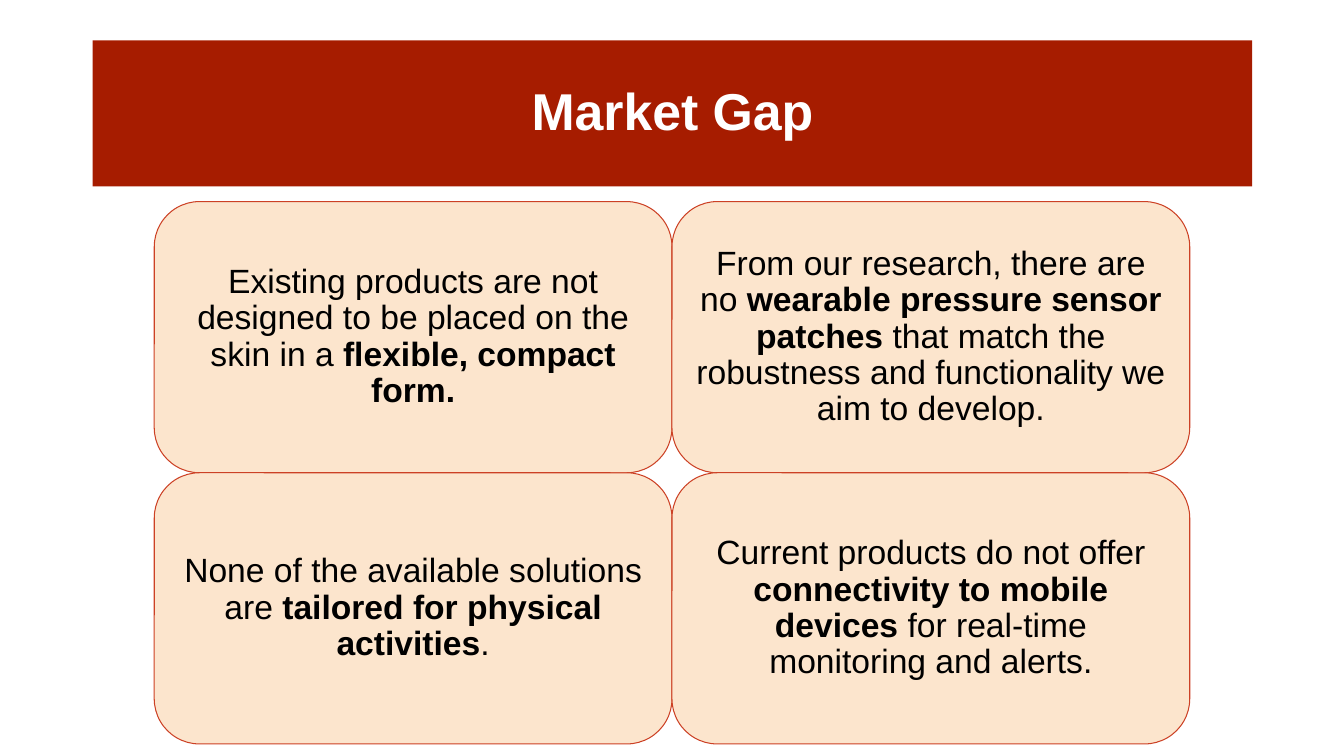
import pptx
import pptx.dml.color
import pptx.enum.shapes
import pptx.enum.text
import pptx.util

RGBColor = pptx.dml.color.RGBColor
Inches = pptx.util.Inches
Shapes = pptx.enum.shapes.MSO_SHAPE

BRICK = RGBColor(0xA6, 0x1C, 0x00)
RUST = RGBColor(0xCC, 0x41, 0x25)
CREAM = RGBColor(0xFC, 0xE5, 0xCD)
BLACK = RGBColor(0, 0, 0)
WHITE = RGBColor(255, 255, 255)

# Card grid, in inches
GRID_LEFT, GRID_TOP = 1.53, 2
COLUMN, ROW = 5.135, 2.69

# Each card is a list of (text, bold) spans
CARDS = [
    [("Existing products are not designed to be placed on the skin in a ", False),
     ("flexible, compact form.", True)],
    [("From our research, there are no ", False),
     ("wearable pressure sensor patches", True),
     (" that match the robustness and functionality we aim to develop.", False)],
    [("None of the available solutions are ", False),
     ("tailored for physical activities", True),
     (".", False)],
    [("Current products do not offer ", False),
     ("connectivity to mobile devices ", True),
     ("for real-time monitoring and alerts.", False)],
]


def apply(target, values):
    for name, value in values.items():
        setattr(target, name, value)


class GapSlide:
    """Holds the style and the current slide."""

    font = "Arial"
    frame = {
        "word_wrap": True,
        "vertical_anchor": pptx.enum.text.MSO_ANCHOR.MIDDLE,
        "margin_left": Inches(0.1),
        "margin_right": Inches(0.1),
    }
    paragraph = {"alignment": pptx.enum.text.PP_ALIGN.CENTER, "line_spacing": 0.9}

    def __init__(self, deck):
        self.page = deck.slides.add_slide(deck.slide_layouts[6])

    def box(self, kind, place, fill):
        box = self.page.shapes.add_shape(kind, *map(Inches, place))
        box.shadow.inherit = False
        box.fill.solid()
        box.fill.fore_color.rgb = fill
        return box

    def label(self, box, spans, size, color, margin, before=0):
        apply(box.text_frame, {**self.frame, "margin_top": Inches(margin),
                               "margin_bottom": Inches(margin)})
        para = box.text_frame.paragraphs[0]
        apply(para, {**self.paragraph, "space_before": pptx.util.Pt(before)})
        for text, bold in spans:
            span = para.add_run()
            span.text = text
            apply(span.font, {"name": self.font, "size": pptx.util.Pt(size), "bold": bold})
            span.font.color.rgb = color

    def banner(self, text):
        box = self.box(Shapes.RECTANGLE, (0.92, 0.4, 11.5, 1.45), BRICK)
        box.line.fill.background()
        self.label(box, [(text, True)], 37, WHITE, 0.05)

    def card(self, column, row, spans):
        place = (GRID_LEFT + column * COLUMN, GRID_TOP + row * ROW, COLUMN, ROW)
        box = self.box(Shapes.ROUNDED_RECTANGLE, place, CREAM)
        box.line.color.rgb = RUST
        box.line.width = pptx.util.Pt(0.75)
        self.label(box, spans, 24, BLACK, 0.1, before=10)


def main():
    deck = pptx.Presentation()
    apply(deck, {"slide_width": Inches(13.33), "slide_height": Inches(7.5)})
    slide = GapSlide(deck)

    # Title
    slide.banner("Market Gap")

    # Two by two cards
    for index, spans in enumerate(CARDS):
        row, column = divmod(index, 2)
        slide.card(column, row, spans)

    deck.save("out.pptx")


if __name__ == "__main__":
    main()
